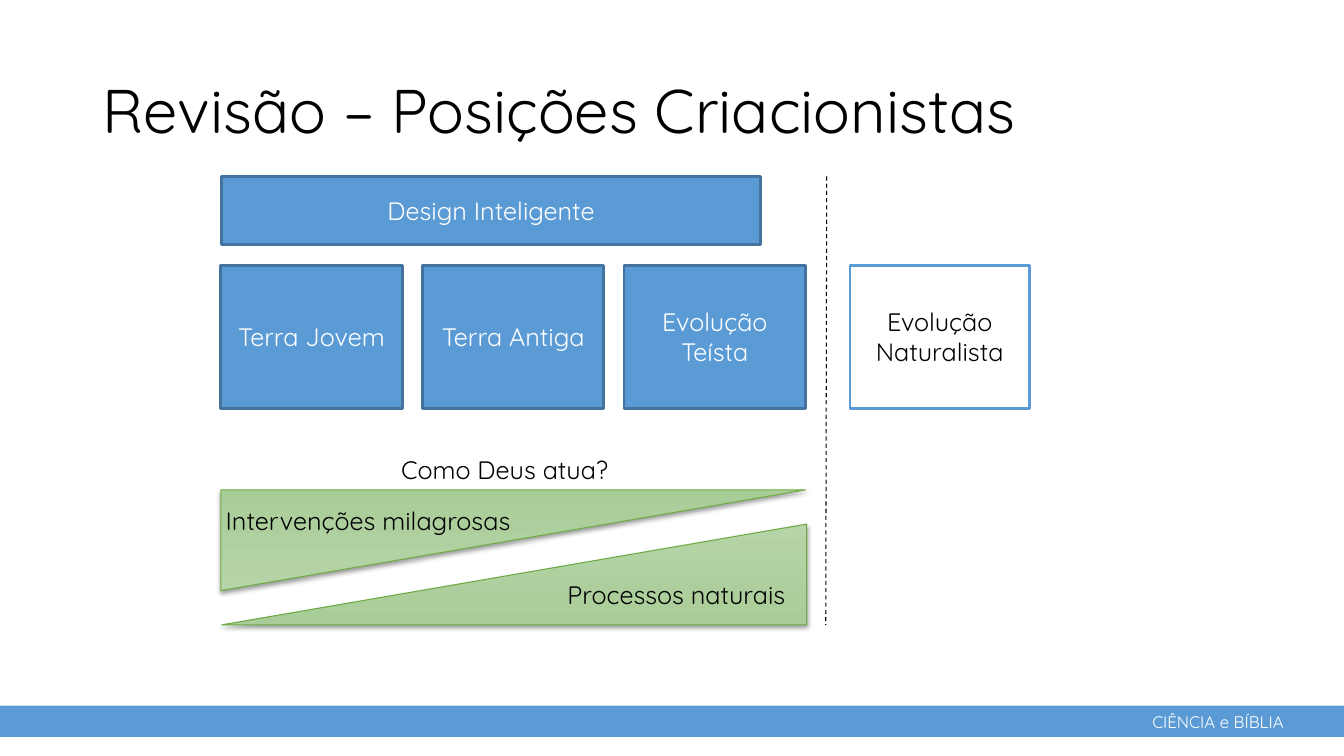
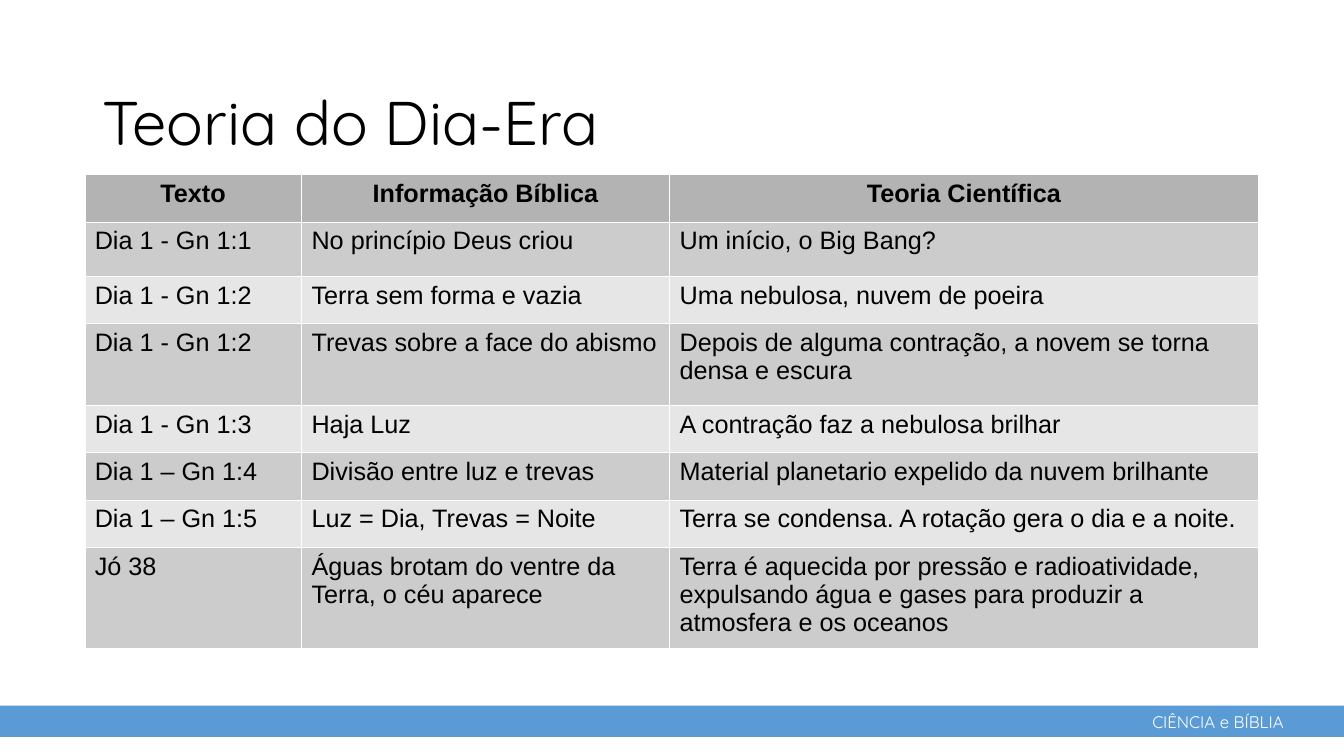
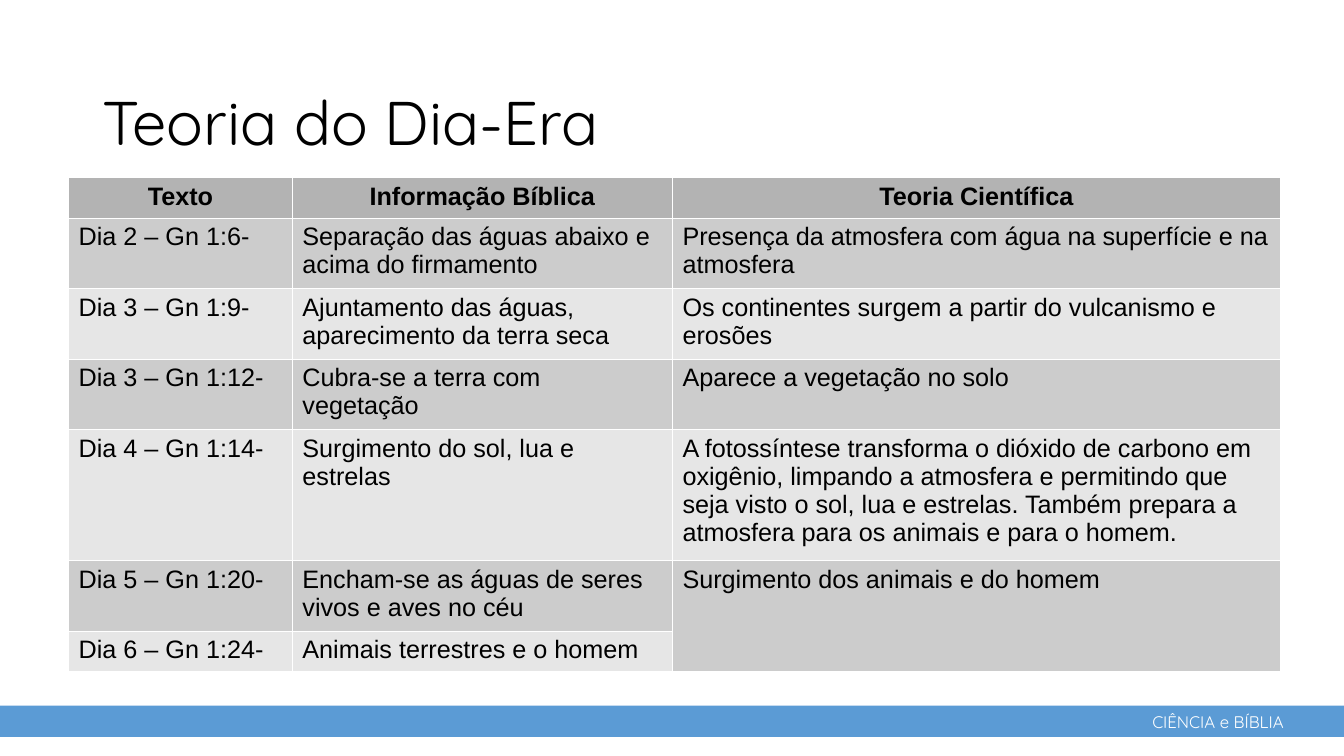
from collections import namedtuple

from lxml.etree import SubElement
from pptx import Presentation
from pptx.dml.color import RGBColor
from pptx.enum.dml import MSO_LINE
from pptx.enum.shapes import MSO_CONNECTOR, MSO_SHAPE
from pptx.enum.text import MSO_ANCHOR, MSO_AUTO_SIZE, PP_ALIGN
from pptx.oxml.ns import qn
from pptx.util import Inches, Pt

Box = namedtuple("Box", "left top width height")

COLORS = {
    "blue": "5B9BD5",
    "blue_edge": "43739E",
    "green_top": "B5D4A7",
    "green_bottom": "A9CD99",
    "green_edge": "6DAC43",
    "header": "B3B3B3",
    "odd_row": "CCCCCC",
    "even_row": "E6E6E6",
    "white": "FFFFFF",
    "black": "000000",
}
TITLE_FONT = "Quicksand"
TABLE_FONT = "Arial"
TITLE_BOX = Box(0.92, 0.4, 11.5, 1.45)
BAND_BOX = Box(0, 7, 13.33, 0.31)

HEADINGS = ("Texto", "Informação Bíblica", "Teoria Científica")
FIRST_DAY = [
    ("Dia 1 - Gn 1:1", "No princípio Deus criou", "Um início, o Big Bang?"),
    ("Dia 1 - Gn 1:2", "Terra sem forma e vazia", "Uma nebulosa, nuvem de poeira"),
    ("Dia 1 - Gn 1:2", "Trevas sobre a face do abismo",
     "Depois de alguma contração, a novem se torna densa e escura"),
    ("Dia 1 - Gn 1:3", "Haja Luz", "A contração faz a nebulosa brilhar"),
    ("Dia 1 – Gn 1:4", "Divisão entre luz e trevas",
     "Material planetario expelido da nuvem brilhante"),
    ("Dia 1 – Gn 1:5", "Luz = Dia, Trevas = Noite",
     "Terra se condensa. A rotação gera o dia e a noite."),
    ("Jó 38", "Águas brotam do ventre da Terra, o céu aparece",
     "Terra é aquecida por pressão e radioatividade, expulsando água e gases "
     "para produzir a atmosfera e os oceanos"),
]
LATER_DAYS = [
    ("Dia 2 – Gn 1:6-", "Separação das águas abaixo e acima do firmamento",
     "Presença da atmosfera com água na superfície e na atmosfera"),
    ("Dia 3 – Gn 1:9-", "Ajuntamento das águas, aparecimento da terra seca",
     "Os continentes surgem a partir do vulcanismo e erosões"),
    ("Dia 3 – Gn 1:12-", "Cubra-se a terra com vegetação",
     "Aparece a vegetação no solo"),
    ("Dia 4 – Gn 1:14-", "Surgimento do sol, lua e estrelas",
     "A fotossíntese transforma o dióxido de carbono em oxigênio, limpando a "
     "atmosfera e permitindo que seja visto o sol, lua e estrelas. Também "
     "prepara a atmosfera para os animais e para o homem."),
    ("Dia 5 – Gn 1:20-", "Encham-se as águas de seres vivos e aves no céu",
     "Surgimento dos animais e do homem"),
    ("Dia 6 – Gn 1:24-", "Animais terrestres e o homem", None),
]


def rgb(name):
    return RGBColor.from_string(COLORS[name])


def inches(box):
    return [Inches(length) for length in box]


def write(frame, text, size, color, font=TITLE_FONT, bold=False, align=PP_ALIGN.LEFT):
    paragraph = frame.paragraphs[0]
    paragraph.alignment = align
    run = paragraph.add_run()
    run.text = text
    run.font.name = font
    run.font.size = Pt(size)
    run.font.bold = bold
    run.font.color.rgb = rgb(color)
    return paragraph


def add_label(slide, box, text, size=18, color="black"):
    label = slide.shapes.add_textbox(*inches(box))
    label.text_frame.word_wrap = False
    label.text_frame.auto_size = MSO_AUTO_SIZE.SHAPE_TO_FIT_TEXT
    write(label.text_frame, text, size, color)
    return label


def add_block(slide, box, fill, edge=None, text=None, color="white"):
    block = slide.shapes.add_shape(MSO_SHAPE.RECTANGLE, *inches(box))
    block.shadow.inherit = False
    block.fill.solid()
    block.fill.fore_color.rgb = rgb(fill)
    if edge:
        block.line.color.rgb = rgb(edge)
        block.line.width = Pt(2)
    else:
        block.line.fill.background()
    if text:
        block.text_frame.word_wrap = True
        block.text_frame.vertical_anchor = MSO_ANCHOR.MIDDLE
        write(block.text_frame, text, 18, color, align=PP_ALIGN.CENTER)
    return block


def add_wedge(slide, box, flip):
    wedge = slide.shapes.add_shape(MSO_SHAPE.RIGHT_TRIANGLE, *inches(box))
    wedge.fill.gradient()
    wedge.fill.gradient_angle = 270
    for stop, color in zip(wedge.fill.gradient_stops, ("green_top", "green_bottom")):
        stop.color.rgb = rgb(color)
    wedge.line.color.rgb = rgb("green_edge")
    wedge.line.width = Pt(0.75)
    wedge.shadow.inherit = False
    properties = wedge.element.spPr
    properties.find(qn("a:xfrm")).set(flip, "1")
    shadow = SubElement(
        properties.find(qn("a:effectLst")), qn("a:outerShdw"),
        blurRad=str(Pt(3.1)), dist=str(Pt(1.6)), dir="5400000", rotWithShape="0",
    )
    shade = SubElement(shadow, qn("a:srgbClr"), val=COLORS["black"])
    SubElement(shade, qn("a:alpha"), val="38000")


def add_divider(slide, start, end):
    divider = slide.shapes.add_connector(
        MSO_CONNECTOR.STRAIGHT, *inches(start), *inches(end)
    )
    divider.line.color.rgb = rgb("black")
    divider.line.width = Pt(0.75)
    divider.line.dash_style = MSO_LINE.DASH
    SubElement(divider.element.spPr, qn("a:effectLst"))


def add_footer(layout, slide, box):
    band = add_block(slide, box, "blue")
    label_box = Box(box.left + 11.33, box.top + 0.01, 1.61, 0.3)
    label = add_label(slide, label_box, "CIÊNCIA e BÍBLIA", 12, "white")
    for part in (band, label):
        layout.shapes.element.append(part.element)


def add_title(slide, text, spacing):
    title = slide.shapes.title
    title.left, title.top, title.width, title.height = inches(TITLE_BOX)
    frame = title.text_frame
    frame.word_wrap = True
    frame.auto_size = MSO_AUTO_SIZE.NONE
    frame.vertical_anchor = MSO_ANCHOR.MIDDLE
    write(frame, text, 44, "black").line_spacing = spacing


def add_positions(slide, box):
    left, top, width, height = box
    block_top = top + 0.88
    for index, name in enumerate(("Terra Jovem", "Terra Antiga", "Evolução Teísta")):
        block_box = Box(left + 2 * index, block_top, 1.8, 1.42)
        add_block(slide, block_box, "blue", "blue_edge", name)
    add_block(slide, Box(left + 6.24, block_top, 1.78, 1.42),
              "white", "blue", "Evolução Naturalista", "black")
    add_block(slide, Box(left + 0.01, top, 5.34, 0.68),
              "blue", "blue_edge", "Design Inteligente")
    add_divider(slide, (left + 6.01, top), (left + 6, top + height))


def add_actions(slide, box):
    left, top, width, height = box
    add_wedge(slide, Box(left, top + 0.4, width, 1), "flipV")
    add_wedge(slide, Box(left + 0.01, top + 0.74, width, 1), "flipH")
    add_label(slide, Box(left + 1.69, top, 2.41, 0.4), "Como Deus atua?")
    add_label(slide, Box(left - 0.05, top + 0.5, 3.25, 0.4), "Intervenções milagrosas")
    add_label(slide, Box(left + 3.34, top + 1.24, 2.53, 0.4), "Processos naturais")


def format_cell(cell, text, fill, heading):
    properties = cell._tc.get_or_add_tcPr()
    for side in ("lnL", "lnR", "lnT", "lnB"):
        border = SubElement(properties, qn(f"a:{side}"), w=str(Pt(0.06)))
        paint = SubElement(border, qn("a:solidFill"))
        SubElement(paint, qn("a:srgbClr"), val=COLORS["white"])
    cell.fill.solid()
    cell.fill.fore_color.rgb = rgb(fill)
    if text:
        align = PP_ALIGN.CENTER if heading else PP_ALIGN.LEFT
        write(cell.text_frame, text, 18, "black", TABLE_FONT, heading, align)


def add_days(slide, box, days, widths, heights):
    rows = [HEADINGS, *days]
    table = slide.shapes.add_table(len(rows), len(HEADINGS), *inches(box)).table
    for column, width in zip(table.columns, widths):
        column.width = Inches(width)
    for index, (texts, height) in enumerate(zip(rows, heights)):
        table.rows[index].height = Inches(height)
        fill = "header" if index == 0 else "odd_row" if index % 2 else "even_row"
        for column, text in enumerate(texts):
            format_cell(table.cell(index, column), text, fill, index == 0)
            if text is None:
                table.cell(index - 1, column).merge(table.cell(index, column))


def add_slide(deck, title, spacing):
    slide = deck.slides.add_slide(deck.slide_layouts[5])
    add_title(slide, title, spacing)
    return slide


def main():
    deck = Presentation()
    deck.slide_width = Inches(13.33)
    deck.slide_height = Inches(7.5)

    review = add_slide(deck, "Revisão – Posições Criacionistas", 0.9)
    add_footer(deck.slide_layouts[5], review, BAND_BOX)
    add_positions(review, Box(2.19, 1.75, 8.02, 4.45))
    add_actions(review, Box(2.19, 4.46, 5.8, 1.74))

    first_day = add_slide(deck, "Teoria do Dia-Era", 1.2)
    add_days(first_day, Box(0.84, 1.73, 11.64, 4.71), FIRST_DAY,
             (2.15, 3.65, 5.84), (0.47, 0.54, 0.47, 0.81, 0.47, 0.47, 0.47, 1))

    later_days = add_slide(deck, "Teoria do Dia-Era", 1.2)
    add_days(later_days, Box(0.68, 1.76, 12.03, 4.9), LATER_DAYS,
             (2.22, 3.77, 6.03), (0.4, 0.7, 0.7, 0.7, 1.3, 0.7, 0.4))

    deck.save("out.pptx")


if __name__ == "__main__":
    main()
